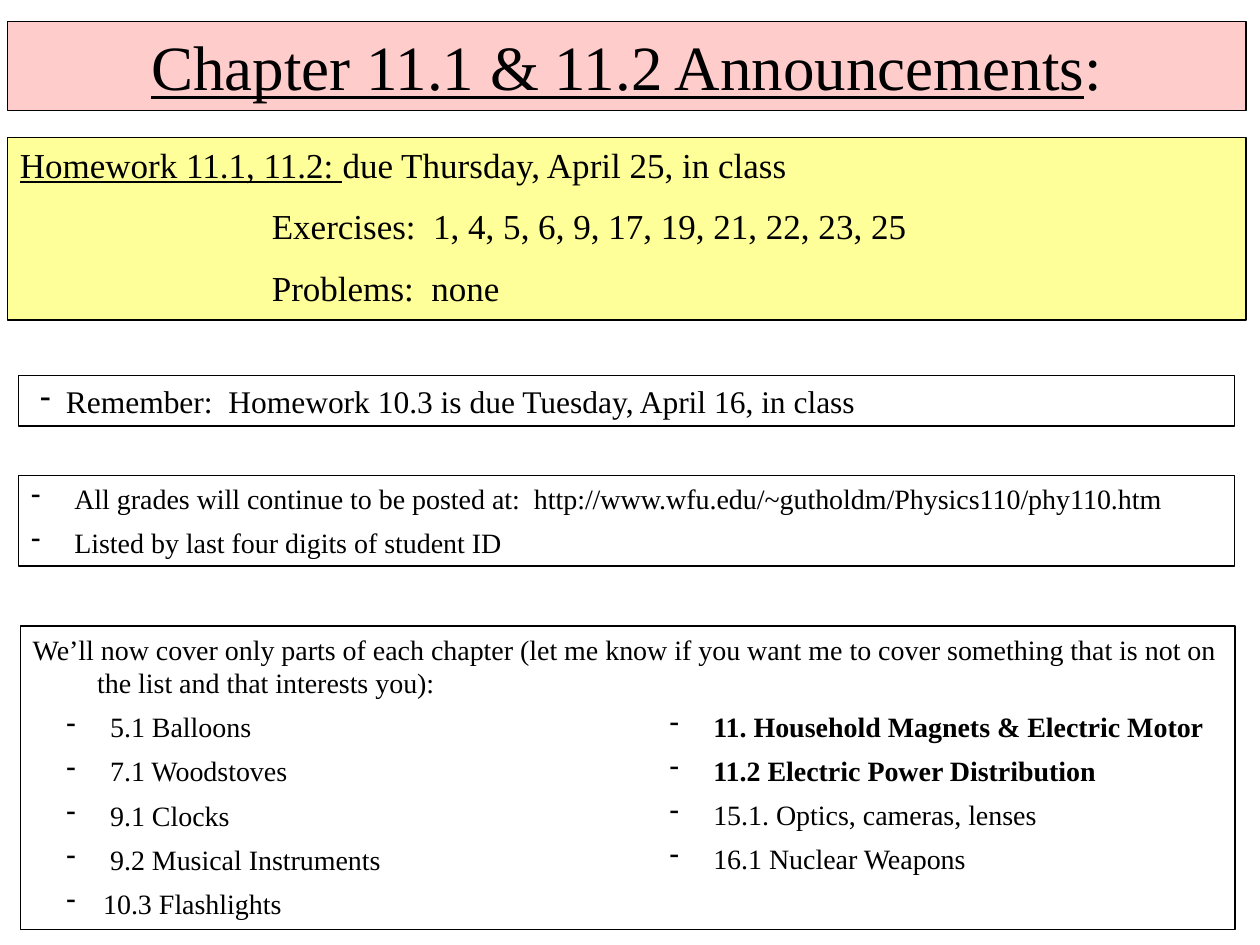
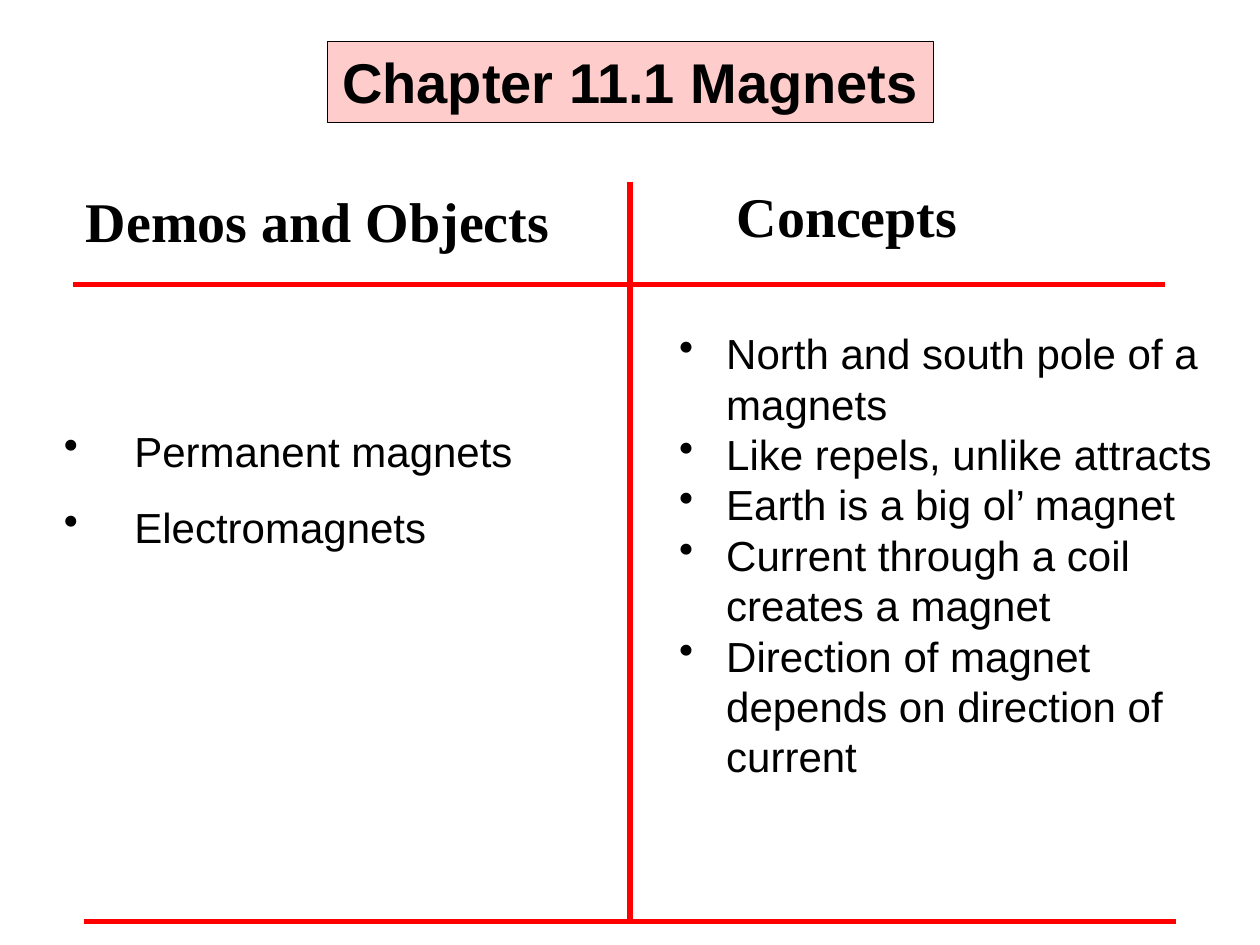
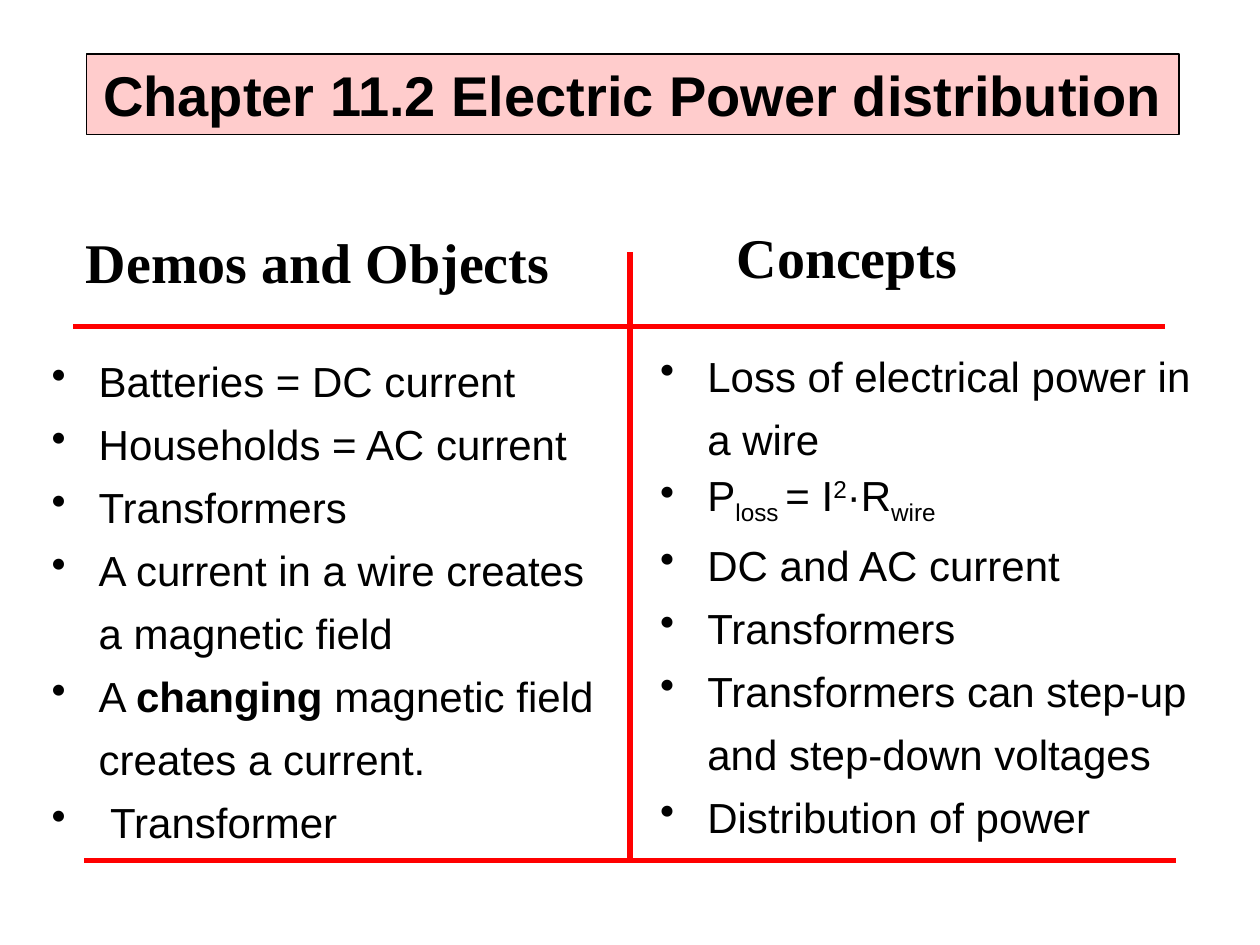
from lxml.etree import SubElement
from pptx import Presentation
from pptx.dml.color import RGBColor
from pptx.enum.shapes import MSO_CONNECTOR, MSO_SHAPE
from pptx.enum.text import MSO_ANCHOR, PP_ALIGN
from pptx.oxml.ns import qn
from pptx.util import Cm, Pt

BLACK, WHITE, RED = "000000", "FFFFFF", "FF0000"
PINK, YELLOW = "FFCCCC", "FFFF99"
SERIF, SANS = "Times New Roman", "Arial"

CHAPTER_TITLE = {"name": SANS, "size": Pt(32), "bold": True}
COLUMN_HEAD = {"name": SERIF, "size": Pt(32), "bold": True}
CONCEPT = {"name": SANS, "size": Pt(24)}
NOTE = {"name": SERIF, "size": Pt(16)}
HOMEWORK = {"name": SERIF, "size": Pt(20)}
BOLD = {"bold": True}
UNDERLINED = {"underline": True}
SUB, SUPER = {"baseline": -25000}, {"baseline": 30000}

CENTRED = {"alignment": PP_ALIGN.CENTER}
AFTER = {"space_after": Pt(6)}
EXACT = {"line_spacing": Pt(36)}


def colour(hex_text):
    return RGBColor.from_string(hex_text)


def set_values(target, values):
    for name, value in values.items():
        setattr(target, name, value)


def add_span(para, text, font):
    """Add a run; a "baseline" value in font raises or lowers it."""
    span = para.add_run()
    span.text = text
    values = dict(font)
    baseline = values.pop("baseline", None)
    set_values(span.font, values)
    span.font.color.rgb = colour(BLACK)
    if baseline:
        span.font._element.set("baseline", str(baseline))


def indent(para, left, first=0.0, bullet=None):
    """Set the left margin and first-line offset in cm, with an optional bullet."""
    properties = para._p.get_or_add_pPr()
    properties.set("marL", str(Cm(left)))
    properties.set("indent", str(Cm(first)))
    if bullet:
        SubElement(properties, qn("a:buChar")).set("char", bullet)


def line(*spans, margins=None, **layout):
    """Describe a paragraph; a span is a text or a (text, font values) pair."""
    return spans, margins, layout


def bullets(texts, margins, **layout):
    return [line(*([text] if isinstance(text, str) else text),
                 margins=margins, **layout) for text in texts]


def add_box(page, frame, lines, font, fill=None):
    """Add a text box, or a filled and outlined rectangle when fill is given."""
    place = [Cm(length) for length in frame]
    if fill:
        box = page.shapes.add_shape(MSO_SHAPE.RECTANGLE, *place)
        box.shadow.inherit = False
        box.fill.solid()
        box.fill.fore_color.rgb = colour(fill)
        box.line.color.rgb = colour(BLACK)
        box.line.width = Pt(0.75)
    else:
        box = page.shapes.add_textbox(*place)
    text_frame = box.text_frame
    set_values(text_frame, {"word_wrap": True, "vertical_anchor": MSO_ANCHOR.TOP})
    for number, (spans, margins, layout) in enumerate(lines):
        para = text_frame.add_paragraph() if number else text_frame.paragraphs[0]
        if margins:
            indent(para, *margins)
        set_values(para, {"alignment": PP_ALIGN.LEFT, **layout})
        for span in spans:
            text, extra = (span, {}) if isinstance(span, str) else span
            add_span(para, text, {**font, **extra})


def add_rule(page, *ends):
    rule = page.shapes.add_connector(MSO_CONNECTOR.STRAIGHT, *map(Cm, ends))
    rule.line.color.rgb = colour(RED)
    rule.line.width = Pt(3)
    SubElement(rule._element.spPr, qn("a:effectLst"))


def add_columns(page, head_top, rule_top, head_rule, bottom):
    """Draw the red rules and the two column heads of a chapter page."""
    add_rule(page, 1.7, bottom, 23.7, bottom)
    add_rule(page, 1.48, head_rule, 23.49, head_rule)
    add_rule(page, 12.7, rule_top, 12.7, bottom)
    add_box(page, (1.48, head_top, 10.21, 1.6), [line("Demos and Objects")], COLUMN_HEAD)
    add_box(page, (14.6, head_top - 0.1, 5.46, 1.6), [line("Concepts")], COLUMN_HEAD)


def add_chapter_title(page, frame, title):
    add_box(page, frame, [line(title, **CENTRED)], CHAPTER_TITLE, PINK)


def build_announcements(page):
    add_box(page, (0.15, 0.43, 24.97, 1.8),
            [line(("Chapter 11.1 & 11.2 Announcements", UNDERLINED), ":", **CENTRED)],
            {"name": SERIF, "size": Pt(36)}, PINK)
    add_box(page, (0.38, 7.57, 24.51, 1.02),
            bullets(["Remember:  Homework 10.3 is due Tuesday, April 16, in class"],
                    (0.7, -0.52, "-"), **AFTER),
            {"name": SERIF, "size": Pt(18)}, WHITE)
    details = ["Exercises:  1, 4, 5, 6, 9, 17, 19, 21, 22, 23, 25", "Problems:  none"]
    add_box(page, (0.15, 2.77, 24.97, 3.68),
            [line(("Homework 11.1, 11.2: ", UNDERLINED), "due Thursday, April 25, in class"),
             *[line(text, margins=(5.08,), space_before=Pt(11)) for text in details]],
            HOMEWORK, YELLOW)
    add_box(page, (0.38, 9.58, 24.51, 1.83),
            bullets(["All grades will continue to be posted at:  "
                     "http://www.wfu.edu/~gutholdm/Physics110/phy110.htm",
                     "Listed by last four digits of student ID"],
                    (0.87, -0.87, "-"), **AFTER),
            NOTE, WHITE)
    topic = (1.56, -0.88, "-")
    add_box(page, (0.41, 12.62, 24.49, 6.12),
            [line("We’ll now cover only parts of each chapter (let me know if you want me to "
                  "cover something that is not on the list and that interests you):",
                  margins=(1.3, -1.3), **AFTER),
             *bullets(["5.1 Balloons", "7.1 Woodstoves", "9.1 Clocks",
                       "9.2 Musical Instruments"], topic, **AFTER),
             *bullets(["10.3 Flashlights"], (1.42, -0.74, "-"), **AFTER)],
            NOTE, WHITE)
    add_box(page, (12.57, 14.17, 12.83, 3.63),
            bullets([[("11. Household Magnets & Electric Motor", BOLD)],
                     [("11.2 Electric Power Distribution", BOLD)],
                     "15.1. Optics, cameras, lenses",
                     "16.1 Nuclear Weapons"], topic, **AFTER),
            NOTE)


def build_magnets(page):
    add_chapter_title(page, (6.6, 0.84, 12.22, 1.63), "Chapter 11.1 Magnets")
    add_box(page, (1.04, 7.95, 10.44, 3.15),
            bullets(["Permanent magnets", "Electromagnets"],
                    (1.42, -1.42, "•"), line_spacing=1.5),
            CONCEPT)
    add_box(page, (13.44, 6.48, 11.33, 9.5),
            bullets(["North and south pole of a magnets",
                     "Like repels, unlike attracts",
                     "Earth is a big ol’ magnet",
                     "Current through a coil creates a magnet",
                     "Direction of magnet depends on direction of current"],
                    (0.95, -0.95, "•")),
            CONCEPT)
    add_columns(page, head_top=3.63, rule_top=3.66, head_rule=5.74, bottom=18.57)


def build_power(page):
    add_chapter_title(page, (1.75, 1.09, 22.02, 1.63),
                      "Chapter 11.2 Electric Power distribution")
    point = (0.95, -0.95, "•")
    add_box(page, (0.79, 6.78, 11.91, 10.39),
            [*bullets(["Batteries = DC current",
                       "Households = AC current",
                       "Transformers",
                       "A current in a wire creates a magnetic field",
                       ["A ", ("changing", BOLD), " magnetic field creates a current."]],
                      point, **EXACT),
             *bullets(["Transformer"], (1.18, -1.18, "•"), **EXACT)],
            CONCEPT)
    add_box(page, (13.06, 6.68, 11.43, 10.52),
            bullets(["Loss of electrical power in a wire",
                     ["P", ("loss ", SUB), "= I", ("2", SUPER), "·R", ("wire", SUB)],
                     "DC and AC current",
                     "Transformers",
                     "Transformers can step-up and step-down voltages",
                     "Distribution of power"], point, **EXACT),
            CONCEPT)
    add_columns(page, head_top=4.47, rule_top=5.08, head_rule=6.58, bottom=17.35)


def main():
    deck = Presentation()
    set_values(deck, {"slide_width": Cm(25.4), "slide_height": Cm(19.05)})
    for build in (build_announcements, build_magnets, build_power):
        build(deck.slides.add_slide(deck.slide_layouts[6]))
    deck.save("out.pptx")


if __name__ == "__main__":
    main()
